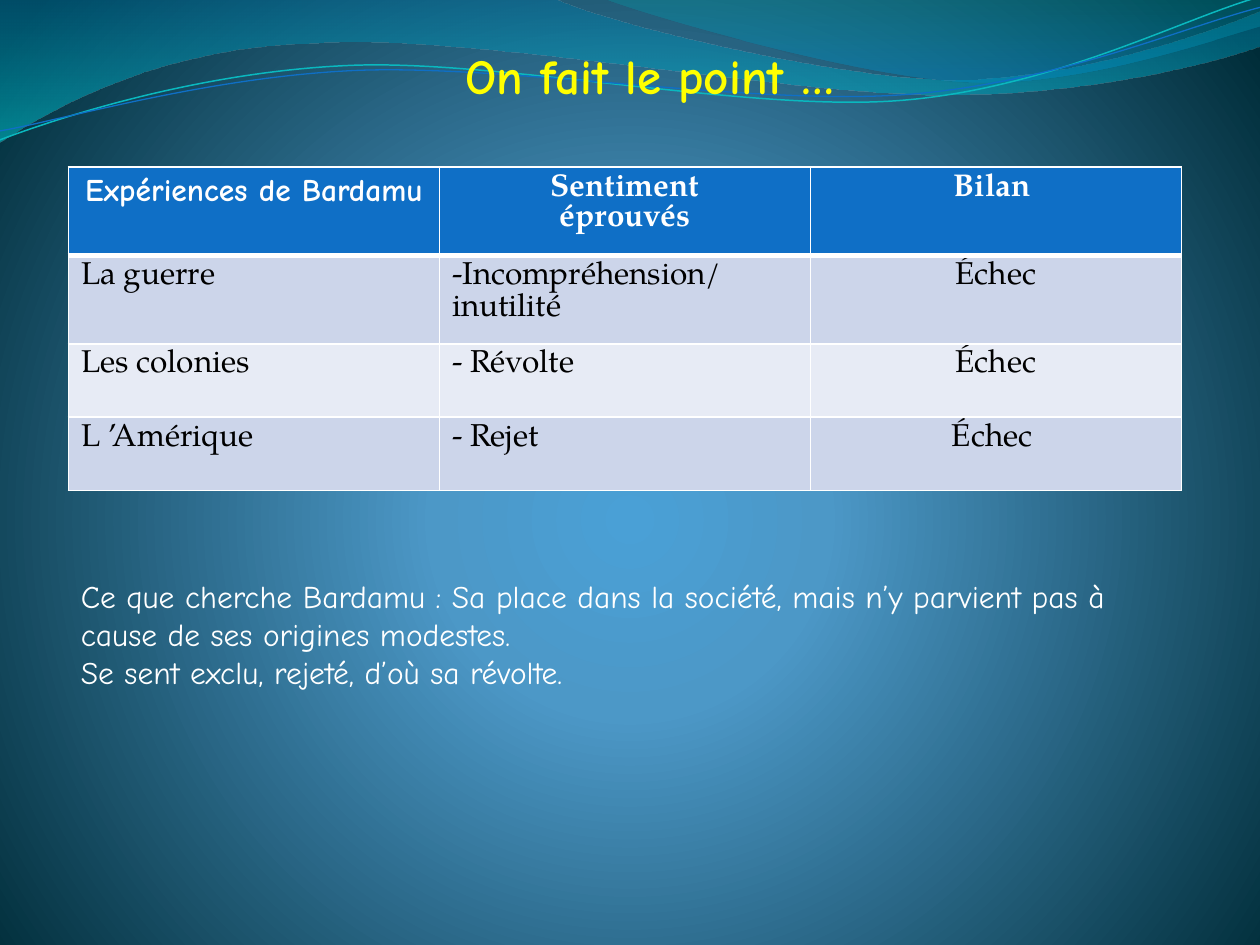
from lxml.etree import SubElement
from pptx import Presentation
from pptx.dml.color import RGBColor
from pptx.enum.text import MSO_AUTO_SIZE, PP_ALIGN
from pptx.oxml import parse_xml
from pptx.oxml.ns import nsdecls, qn
from pptx.util import Cm, Pt

COLORS = {
    "title": "FFFF00", "white": "FFFFFF", "black": "000000",
    "header": "0F6FC6", "odd": "CCD5EA", "even": "E7EBF5",
    "glow": "4AA0D6", "mid": "4C98C7", "edge": "002C38",
    "wave_blue": "0074A1", "wave_cyan": "00C6CF",
    "crest_teal": "00A1A9", "crest_blue": "008BBF",
    "line_cyan": "0AB8BF", "line_blue": "0F6FC6",
}
HAND, SERIF = "Comic Neue", "TeX Gyre Pagella"


def draw_path(start, segments, close):
    """Segments are (x, y) for a straight line or six numbers for a cubic curve, in cm."""
    builder = slide.shapes.build_freeform(Cm(start[0]), Cm(start[1]))
    builder.add_line_segments(
        [(Cm(x), Cm(y)) for segment in segments
         for x, y in zip(segment[::2], segment[1::2])], close=close)
    outline = builder.convert_to_shape()
    outline.shadow.inherit = False
    nodes = iter(outline.element.xpath(".//a:lnTo"))
    for segment in segments:
        first = next(nodes)
        if len(segment) == 6:
            first.tag = qn("a:cubicBezTo")
            for _ in range(2):
                node = next(nodes)
                first.append(node[0])
                node.getparent().remove(node)
    return outline


def write(frame, lines, color, align=PP_ALIGN.LEFT, **font_format):
    frame.word_wrap = True
    for number, line in enumerate(lines):
        paragraph = frame.paragraphs[0] if number == 0 else frame.add_paragraph()
        paragraph.alignment = align
        run = paragraph.add_run()
        run.text = line
        run.font.color.rgb = RGBColor.from_string(COLORS[color])
        for key, value in font_format.items():
            setattr(run.font, key, value)


prs = Presentation()
prs.slide_width, prs.slide_height = Cm(25.4), Cm(19.05)
slide = prs.slides.add_slide(prs.slide_layouts[6])

# Background glow
slide.background.fill.gradient()
backdrop = slide.element.xpath(".//a:gradFill")[0]
stops = "".join(
    f'<a:gs pos="{position * 1000}"><a:srgbClr val="{COLORS[name]}"/></a:gs>'
    for position, name in ((0, "glow"), (25, "mid"), (100, "edge")))
backdrop.getparent().replace(backdrop, parse_xml(
    f'<a:gradFill {nsdecls("a")} rotWithShape="1"><a:gsLst>{stops}</a:gsLst>'
    '<a:path path="circle"><a:fillToRect l="10000" t="110000" r="10000" b="100000"/></a:path>'
    '</a:gradFill>'))

# Waves: start, segments, gradient stops (position, colour, opacity in %)
waves = [
    ((0, 0),
     [(11.18, -0.03), (12.09, 0.43, 16.87, 1.6, 19.25, 1.6),
      (21.67, 1.6, 24.33, 0.66, 25.4, 0.23), (25.43, 0.91),
      (24.97, 1.12, 22.1, 1.93, 18.95, 1.91), (15.8, 1.9, 9.7, 0.71, 6.53, 0.86),
      (3.28, 0.91, 1.17, 2.11, -0.03, 2.87), (0, 0)],
     [(0, "wave_blue", 45), (1, "wave_cyan", 55)]),
    ((12.17, -0.03),
     [(12.93, 0.28, 17.32, 1.57, 19.53, 1.65),
      (21.74, 1.75, 24.41, 0.81, 25.4, 0.53), (25.4, 0), (12.17, -0.03)],
     [(0, "crest_teal", 30), (0.8, "crest_blue", 45)]),
]
for start, segments, gradient in waves:
    wave = draw_path(start, segments, True)
    wave.line.fill.background()
    wave.fill.gradient()
    wave.fill.gradient_angle = 270
    for stop, (position, name, _) in zip(wave.fill.gradient_stops, gradient):
        stop.position = position
        stop.color.rgb = RGBColor.from_string(COLORS[name])
    for tint, (_, _, opacity) in zip(wave.element.xpath("./p:spPr//a:srgbClr"), gradient):
        SubElement(tint, qn("a:alpha")).set("val", str(opacity * 1000))

ripples = [
    ((0, 2.82),
     [(1.22, 2.36, 4.01, 1.45, 7.04, 1.32), (10.03, 1.19, 15.06, 2.26, 18.11, 2.03),
      (21.16, 1.8, 23.83, 0.38, 25.35, -0.05)], "line_cyan", 0.85),
    ((0, 2.64),
     [(1.19, 2.44, 4.17, 1.55, 7.19, 1.42), (10.24, 1.3, 15.16, 2.13, 18.21, 1.91),
      (21.23, 1.7, 23.9, 0.53, 25.4, 0.15)], "line_blue", 0.75),
]
for start, segments, name, width in ripples:
    ripple = draw_path(start, segments, False)
    ripple.fill.background()
    ripple.line.color.rgb = RGBColor.from_string(COLORS[name])
    ripple.line.width = Pt(width)

# Title
title = slide.shapes.add_textbox(Cm(1.78), Cm(0.79), Cm(22.63), Cm(1.45)).text_frame
title.auto_size = MSO_AUTO_SIZE.SHAPE_TO_FIT_TEXT
write(title, ["On fait le point …"], "title", PP_ALIGN.CENTER,
      name=HAND, size=Pt(28), bold=True)

# Table of experiences
rows = [
    (["Expériences de Bardamu"], ["Sentiment", "éprouvés"], ["Bilan "]),
    (["La guerre"], ["Incompréhension/ inutilité"], ["Échec"]),
    (["Les colonies"], ["- Révolte"], ["Échec"]),
    (["L ’Amérique"], ["- Rejet"], ["Échec "]),
]
heights = [1.78, 1.78, 1.48, 1.48]
table = slide.shapes.add_table(4, 3, Cm(1.38), Cm(3.37), Cm(22.43), Cm(sum(heights))).table
for column in table.columns:
    column.width = Cm(7.48)
for r, (row, height) in enumerate(zip(rows, heights)):
    table.rows[r].height = Cm(height)
    header = r == 0
    for c, lines in enumerate(row):
        cell = table.cell(r, c)
        write(cell.text_frame, lines, "white" if header else "black",
              PP_ALIGN.CENTER if header or c == 2 else PP_ALIGN.LEFT,
              name=HAND if header and c == 0 else SERIF, size=Pt(18), bold=header)
        properties = cell._tc.get_or_add_tcPr()
        for side in "LRTB":
            thick = (r, side) in ((0, "B"), (1, "T"))
            properties.append(parse_xml(
                f'<a:ln{side} {nsdecls("a")} w="{Pt(3 if thick else 1)}"><a:solidFill>'
                f'<a:srgbClr val="{COLORS["white"]}"/></a:solidFill></a:ln{side}>'))
        cell.fill.solid()
        band = "header" if header else "odd" if r % 2 else "even"
        cell.fill.fore_color.rgb = RGBColor.from_string(COLORS[band])

dash = table.cell(1, 1).text_frame.paragraphs[0]._p.get_or_add_pPr()
dash.set("marL", "0")
dash.set("indent", "0")
SubElement(dash, qn("a:buFont")).set("typeface", SERIF)
SubElement(dash, qn("a:buChar")).set("char", "-")

# Conclusion
conclusion = slide.shapes.add_textbox(Cm(1.38), Cm(11.51), Cm(22.43), Cm(2.57)).text_frame
conclusion.auto_size = MSO_AUTO_SIZE.SHAPE_TO_FIT_TEXT
write(conclusion, [
    "Ce que cherche Bardamu : Sa place dans la société, mais n’y parvient pas à "
    "cause de ses origines modestes.",
    "Se sent exclu, rejeté, d’où sa révolte.",
], "white", name=HAND, size=Pt(18))

prs.save("out.pptx")
